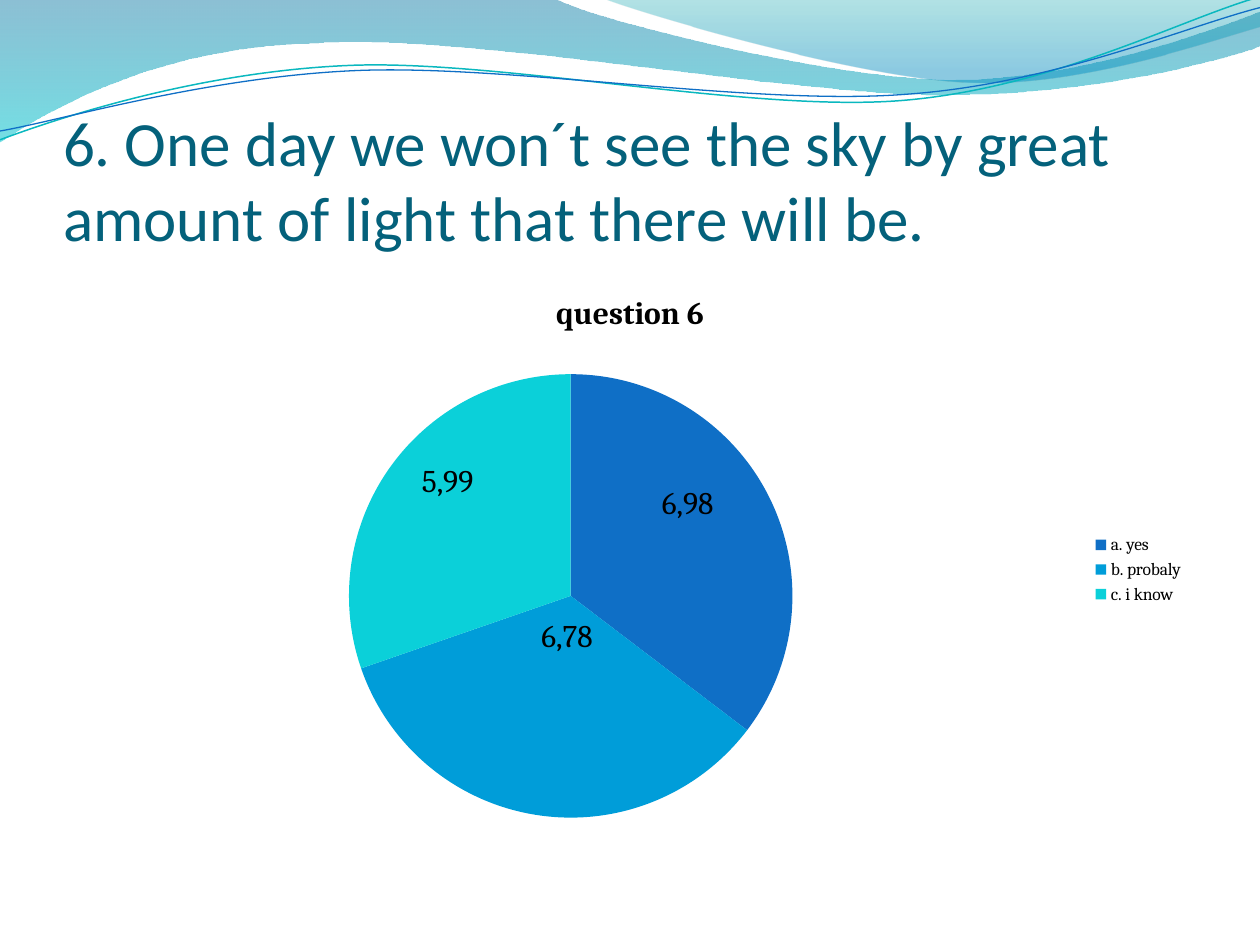
from math import cos, radians, sin

from lxml.etree import SubElement
from pptx import Presentation
from pptx.chart.data import CategoryChartData
from pptx.dml.color import RGBColor
from pptx.enum.chart import XL_CHART_TYPE, XL_LABEL_POSITION, XL_LEGEND_POSITION
from pptx.enum.text import MSO_ANCHOR, MSO_AUTO_SIZE, PP_ALIGN
from pptx.oxml import parse_xml
from pptx.oxml.ns import nsdecls, qn
from pptx.util import Inches, Pt

COLORS = {
    "title": "04617B", "text": "000000",
    "yes": "0F6FC6", "probably": "009DD9", "know": "0BD0D9",
    "deep": "0074A1", "aqua": "00C6CF", "teal": "00A1A9", "azure": "008BBF",
    "teal_line": "0AB8BF", "blue_line": "0F6FC6",
}

# Waves: box, then a start, points (2 numbers) and Bezier curves (6 numbers)
BANDS = [
    ((-0.01, -0.01, 10.02, 1.14),
     [(0, 0), (4.4, -0.01),
      (4.76, 0.17, 6.64, 0.63, 7.58, 0.63), (8.53, 0.63, 9.58, 0.26, 10, 0.09),
      (10.01, 0.36),
      (9.83, 0.44, 8.7, 0.76, 7.46, 0.75), (6.22, 0.75, 3.82, 0.28, 2.57, 0.34),
      (1.29, 0.36, 0.46, 0.83, -0.01, 1.13), (0, 0)],
     [(0, "deep", 45), (1, "aqua", 55)]),
    ((4.79, -0.01, 5.21, 0.7),
     [(4.79, -0.01),
      (5.09, 0.11, 6.82, 0.62, 7.69, 0.65), (8.56, 0.69, 9.61, 0.32, 10, 0.21),
      (10, 0), (4.79, -0.01)],
     [(0, "teal", 30), (0.8, "azure", 45)]),
]
STRANDS = [
    ((-0.02, 0.22, 10.02, 0.71),
     [(0, 1.11), (0.48, 0.93, 1.58, 0.57, 2.77, 0.52),
      (3.95, 0.47, 5.93, 0.89, 7.13, 0.8), (8.33, 0.71, 9.38, 0.15, 9.98, -0.02)],
     "teal_line", 0.85),
    ((-0.02, 0.3, 10.03, 0.58),
     [(0, 1.04), (0.47, 0.96, 1.64, 0.61, 2.83, 0.56),
      (4.03, 0.51, 5.97, 0.84, 7.17, 0.75), (8.36, 0.67, 9.41, 0.21, 10, 0.06)],
     "blue_line", 0.75),
]
STRAND_TILT = -2.7

# Answer, value, colour, label, label offset in inches
ANSWERS = [
    ("a. yes", 35, "yes", "6,98", (0.14, -0.34)),
    ("b. probaly", 34, "probably", "6,78", (0.11, -0.54)),
    ("c. i know", 30, "know", "5,99", (-0.26, -0.39)),
]
PIE_BOX = (0.65, 0.85, 6.76, 3.52)


def rgb(name):
    return RGBColor.from_string(COLORS[name])


def add_outline(slide, left, top, box, segments, close, tilt=0):
    """Draw lines and curves in a box that is turned by tilt degrees."""
    x, y, width, height = box
    builder = slide.shapes.build_freeform(left + Inches(x), top + Inches(y))
    builder.add_line_segments(
        [(left + Inches(x + width), top + Inches(y + height))], close=close)
    outline = builder.convert_to_shape()
    outline.shadow.inherit = False
    outline.rotation = tilt % 360

    # Replace the box diagonal by the segments, turned back into the box
    turn = radians(-tilt)
    wave = next(outline._element.iter(qn("a:path")))
    for step in list(wave):
        wave.remove(step)
    for index, segment in enumerate(segments):
        tag = "a:cubicBezTo" if len(segment) == 6 else "a:lnTo" if index else "a:moveTo"
        step = SubElement(wave, qn(tag))
        for px, py in zip(segment[::2], segment[1::2]):
            dx, dy = px - x - width / 2, py - y - height / 2
            point = SubElement(step, qn("a:pt"))
            point.set("x", str(Inches(width / 2 + dx * cos(turn) - dy * sin(turn))))
            point.set("y", str(Inches(height / 2 + dx * sin(turn) + dy * cos(turn))))
    if close:
        SubElement(wave, qn("a:close"))
    return outline


def add_waves(slide, left, top):
    for box, segments, stops in BANDS:
        band = add_outline(slide, left, top, box, segments, close=True)
        band.line.fill.background()
        band.fill.gradient()
        band.fill.gradient_angle = 270
        for stop, (position, color, _) in zip(band.fill.gradient_stops, stops):
            stop.position = position
            stop.color.rgb = rgb(color)
        # Opacity of each gradient stop
        tints = band._element.spPr.iter(qn("a:srgbClr"))
        for tint, (_, _, opacity) in zip(tints, stops):
            SubElement(tint, qn("a:alpha")).set("val", str(opacity * 1000))
    for box, segments, color, width in STRANDS:
        strand = add_outline(slide, left, top, box, segments, False, STRAND_TILT)
        strand.fill.background()
        strand.line.color.rgb = rgb(color)
        strand.line.width = Pt(width)


def place_title(slide, left, top, width, height):
    title = slide.shapes.title
    title.left, title.top, title.width, title.height = left, top, width, height
    frame = title.text_frame
    frame.text = "6. One day we won´t see the sky by great amount of light that there will be."
    frame.word_wrap = True
    frame.auto_size = MSO_AUTO_SIZE.NONE
    frame.vertical_anchor = MSO_ANCHOR.BOTTOM
    frame.margin_left = frame.margin_right = frame.margin_bottom = 0
    frame.margin_top = Inches(0.05)
    heading = frame.paragraphs[0]
    heading.alignment = PP_ALIGN.LEFT
    heading.font.name, heading.font.size = "Calibri", Pt(36)
    heading.font.color.rgb = rgb("title")
    # Bring the title in front of the waves
    slide.shapes._spTree.append(title._element)


def style_font(font, size, bold=False):
    font.name, font.size, font.bold = "Cambria", Pt(size), bold
    font.color.rgb = rgb("text")


def set_layout(parent, index, x, y, extra=""):
    """Give a chart part its manual place, as shares of the chart."""
    for layout in parent.findall(qn("c:layout")):
        parent.remove(layout)
    layout = parse_xml(
        f'<c:layout {nsdecls("c")}><c:manualLayout>{extra}'
        f'<c:x val="{x}"/><c:y val="{y}"/></c:manualLayout></c:layout>')
    parent.insert(index, layout)
    return layout[0]


def add_answer_pie(slide, left, top, width, height):
    chart_data = CategoryChartData()
    chart_data.categories = [answer[0] for answer in ANSWERS]
    chart_data.add_series("question 6", [answer[1] for answer in ANSWERS])
    chart = slide.shapes.add_chart(
        XL_CHART_TYPE.PIE, left, top, width, height, chart_data).chart
    style_font(chart.font, 10)

    # Title and legend
    chart.has_title = True
    chart.chart_title.text_frame.text = "question 6"
    style_font(chart.chart_title.text_frame.paragraphs[0].font, 18, bold=True)
    chart.has_legend = True
    chart.legend.position = XL_LEGEND_POSITION.RIGHT
    chart.legend.include_in_layout = False

    # Plot area inside the chart
    x, y, pie_width, pie_height = map(Inches, PIE_BOX)
    place = set_layout(
        chart._chartSpace.chart.plotArea, 0, x / width, y / height,
        '<c:layoutTarget val="inner"/><c:xMode val="edge"/><c:yMode val="edge"/>')
    SubElement(place, qn("c:w")).set("val", str(pie_width / width))
    SubElement(place, qn("c:h")).set("val", str(pie_height / height))

    # Slices and their labels
    pie = chart.plots[0]
    pie.vary_by_categories = True
    for index, (_, _, color, caption, (dx, dy)) in enumerate(ANSWERS):
        point = pie.series[0].points[index]
        point.format.fill.solid()
        point.format.fill.fore_color.rgb = rgb(color)
        label = point.data_label
        label.text_frame.text = caption
        style_font(label.text_frame.paragraphs[0].runs[0].font, 18)
        label.position = XL_LABEL_POSITION.CENTER
        set_layout(label._dLbl, 1, Inches(dx) / width, Inches(dy) / height)


def main():
    deck = Presentation()
    deck.slide_width, deck.slide_height = Inches(10), Inches(7.5)
    slide = deck.slides.add_slide(deck.slide_layouts[5])
    add_waves(slide, 0, 0)
    place_title(slide, Inches(0.5), Inches(0.77), Inches(9), Inches(1.25))
    add_answer_pie(slide, Inches(0.5), Inches(2.12), Inches(9), Inches(4.8))
    deck.save("out.pptx")


if __name__ == "__main__":
    main()
